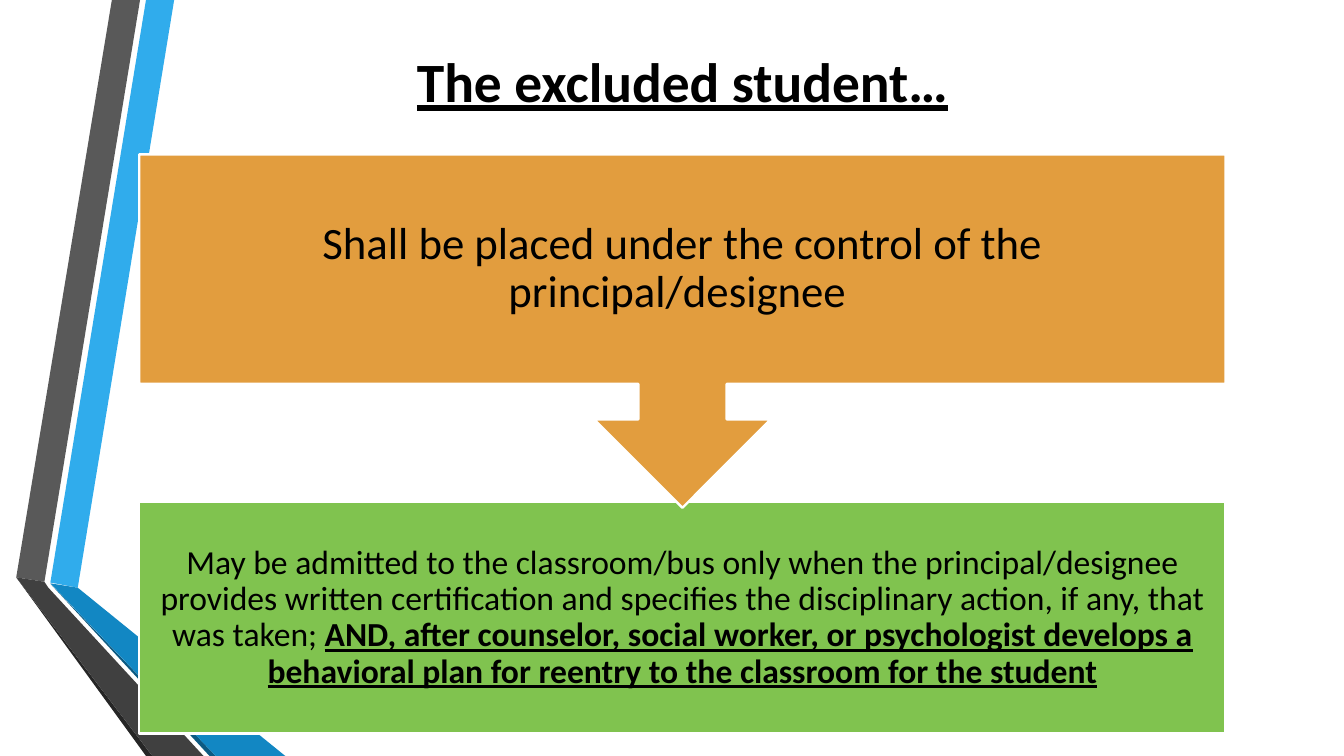
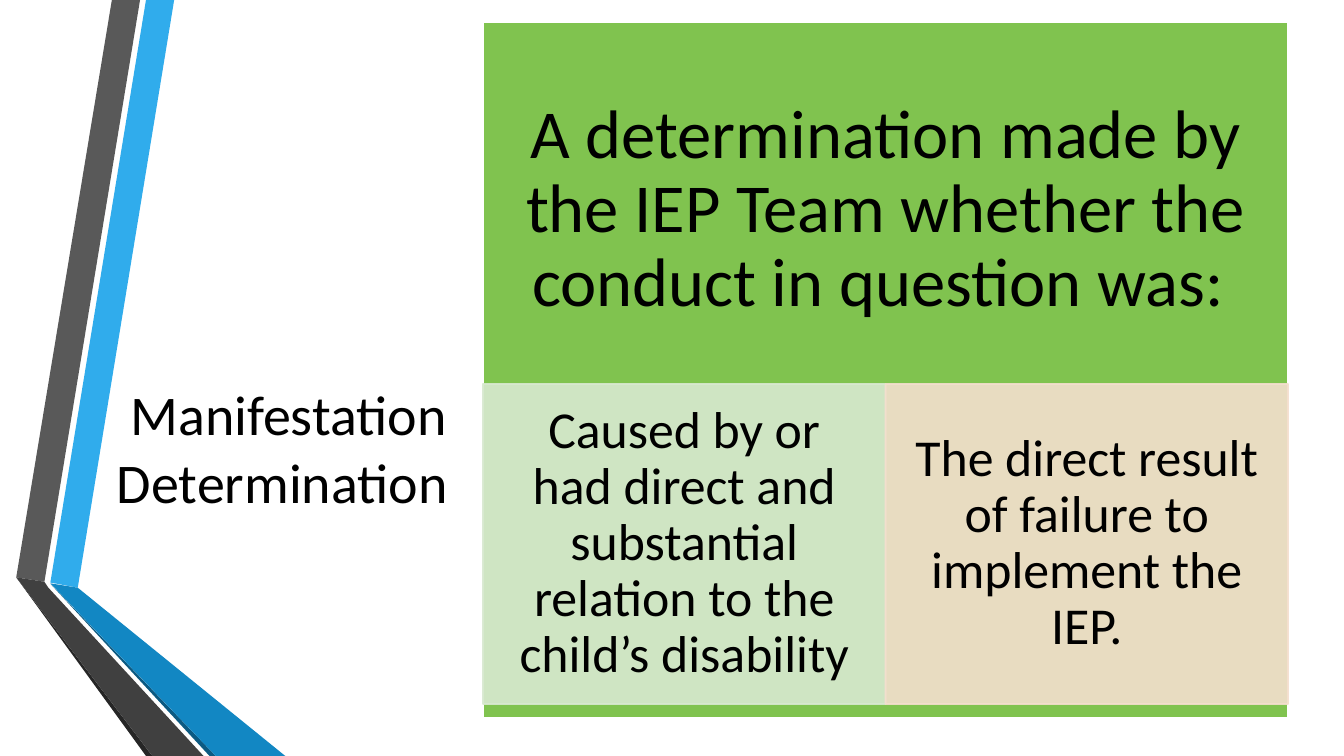
from lxml.etree import SubElement
from pptx import Presentation
from pptx.dml.color import RGBColor
from pptx.enum.shapes import MSO_SHAPE
from pptx.enum.text import MSO_ANCHOR, PP_ALIGN
from pptx.oxml.ns import qn
from pptx.util import Cm, Pt

FONT = "Calibri"
BLACK, WHITE = "000000", "FFFFFF"
GREEN, ORANGE = "80C34F", "E29D3E"
PALE_GREEN, PALE_ORANGE = "D8E9D0", "F4DFCE"
WIDTH, HEIGHT = 33.87, 19.05
RIBBON = [
    ("30ACEC", [(1.27, 14.68), (1.96, 14.81), (4.39, 0), (3.68, 0)]),
    ("595959", [(3.53, 0), (2.82, 0), (0.41, 14.55), (1.12, 14.66)]),
    ("262626", [(0.41, 14.55), (3.68, HEIGHT), (3.84, HEIGHT)]),
    ("0C5A82", [(1.27, 14.71), (5.28, HEIGHT), (5.44, HEIGHT)]),
    ("1287C3", [(1.27, 14.7), (5.44, HEIGHT), (7.19, HEIGHT), (1.96, 14.81)]),
    ("404040", [(5.13, HEIGHT), (1.22, 14.81), (1.12, 14.66), (0.41, 14.55),
                (3.84, HEIGHT)]),
]


def rgb(value):
    """Turn a hex string into a colour."""
    return RGBColor.from_string(value)


def paint(sp, fill, line=None, width=0, alpha=None):
    """Set the fill, outline and opacity percentage of a shape."""
    sp.shadow.inherit = False
    sp.fill.solid()
    sp.fill.fore_color.rgb = rgb(fill)
    if line:
        sp.line.color.rgb = rgb(line)
        sp.line.width = Pt(width)
    else:
        sp.line.fill.background()
    if alpha:
        for color in sp._element.spPr.iter(qn("a:srgbClr")):
            SubElement(color, qn("a:alpha"), val=str(alpha * 1000))


def write(sp, runs, size, insets=(0.25, 0.13, 0.25, 0.13), spacing=None):
    """Write centred (text, emphasised) runs into a shape."""
    tf = sp.text_frame
    tf.word_wrap = True
    tf.vertical_anchor = MSO_ANCHOR.MIDDLE
    tf.margin_left, tf.margin_top, tf.margin_right, tf.margin_bottom = map(Cm, insets)
    p = tf.paragraphs[0]
    p.alignment = PP_ALIGN.CENTER
    if spacing:
        p.line_spacing = spacing
    for text, emphasised in runs:
        r = p.add_run()
        r.text = text
        r.font.name = FONT
        r.font.size = Pt(size)
        r.font.color.rgb = rgb(BLACK)
        if emphasised:
            r.font.bold = r.font.underline = True


def add_panel(s, box, fill, runs, size, insets, line=WHITE, width=1.75,
              alpha=None, kind=MSO_SHAPE.RECTANGLE):
    """Add a filled panel that holds its own text."""
    sp = s.shapes.add_shape(kind, *map(Cm, box))
    paint(sp, fill, line, width, alpha)
    write(sp, runs, size, insets, 0.9)


def add_ribbon(s, left=0, top=0):
    """Draw the folded ribbon at the left edge as one group."""
    group = s.shapes.add_group_shape()
    for color, points in RIBBON:
        start, *rest = [(Cm(left + x), Cm(top + y)) for x, y in points]
        builder = group.shapes.build_freeform(*start)
        builder.add_line_segments(rest, close=True)
        paint(builder.convert_to_shape(), color)


def add_title(s, box, text, size, emphasised=False):
    """Add the slide title."""
    write(s.shapes.add_textbox(*map(Cm, box)), [(text, emphasised)], size)


def add_steps(s, box, first, second):
    """Stack an arrow callout above the panel it points to."""
    x, y, w, h = box
    low = 0.4 * h
    add_panel(s, (x, y + h - low, w, low), GREEN, second, 24, [0.48] * 4)
    add_panel(s, (x, y, w, 0.61 * h), ORANGE, first, 32, [0.64] * 4,
              kind=MSO_SHAPE.DOWN_ARROW_CALLOUT)


def add_criteria(s, box, heading, criteria):
    """Add a headed panel with equal criteria side by side in its lower part."""
    x, y, w, h = box
    add_panel(s, box, GREEN, [(heading, False)], 49,
              (0.97, 0.97, 0.97, 0.46 * h + 0.97), width=1.25)
    cell = w / len(criteria)
    for i, (text, fill) in enumerate(criteria):
        add_panel(s, (x + i * cell, y + 0.52 * h, cell, 0.46 * h), fill,
                  [(text, False)], 37, (0.74, 0.13, 0.74, 0.13),
                  line=fill, width=1.25, alpha=90)


def new_slide(prs):
    """Add a blank slide with the shared ribbon."""
    s = prs.slides.add_slide(prs.slide_layouts[6])
    add_ribbon(s)
    return s


def excluded_slide(prs):
    """Build the slide on the excluded student."""
    s = new_slide(prs)
    add_title(s, (8.5, 1.1, 17.4, 1.85), "The excluded student…", 39.6, True)
    add_steps(
        s, (3.51, 3.89, 27.38, 14.6),
        [("Shall be placed under the control of the principal/designee ", False)],
        [("May be admitted to the classroom/bus only when the principal/designee "
          "provides written certification and specifies the disciplinary action, "
          "if any, that was taken; ", False),
         ("AND, after counselor, social worker, or psychologist develops a "
          "behavioral plan for reentry to the classroom for the student", True)])


def manifestation_slide(prs):
    """Build the slide on manifestation determination."""
    s = new_slide(prs)
    add_title(s, (1.1, 6.68, 12.35, 9.17), "Manifestation Determination ", 40)
    add_criteria(
        s, (12.17, 0.56, 20.29, 17.53),
        "A determination made by the IEP Team whether the conduct in question was: ",
        [("Caused by or had direct and substantial relation to the child’s disability",
          PALE_GREEN),
         ("The direct result of failure to implement the IEP.", PALE_ORANGE)])


def main():
    """Build and save the presentation."""
    prs = Presentation()
    prs.slide_width, prs.slide_height = Cm(WIDTH), Cm(HEIGHT)
    excluded_slide(prs)
    manifestation_slide(prs)
    prs.save("out.pptx")


if __name__ == "__main__":
    main()
